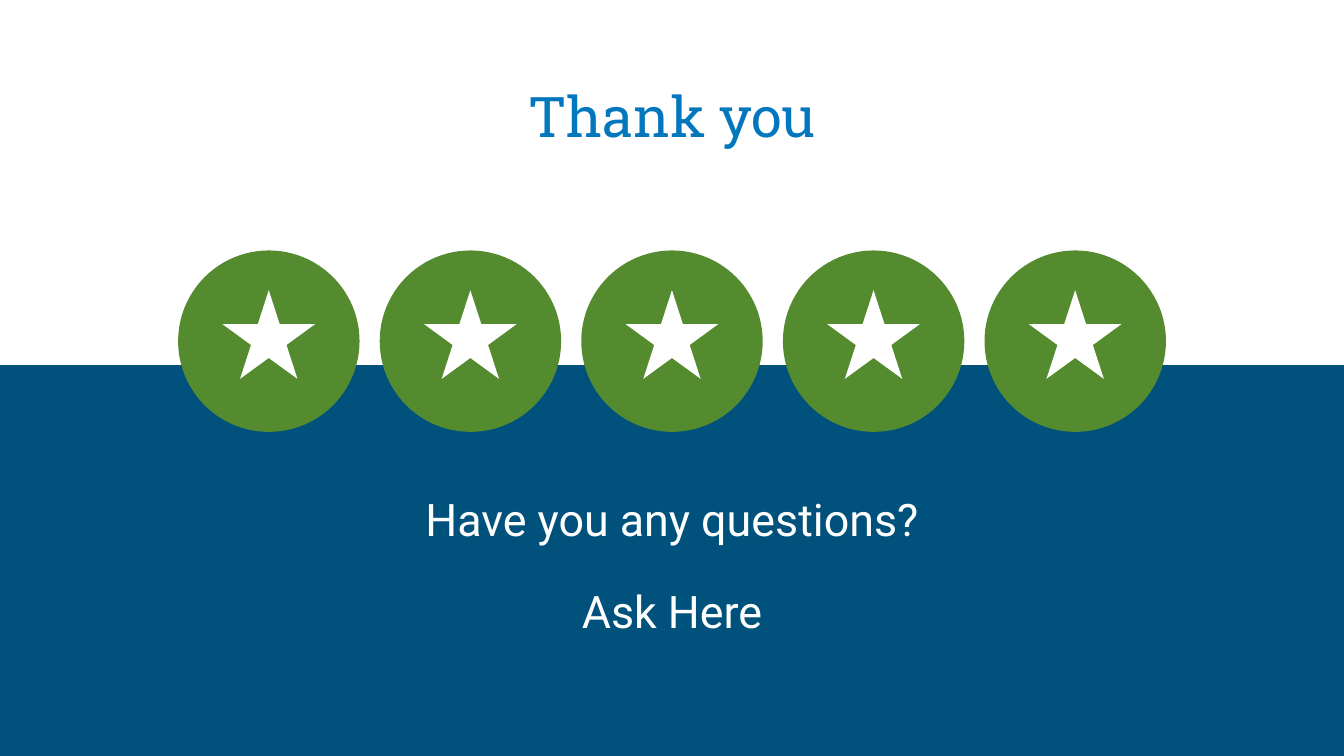
from pptx import Presentation
from pptx.dml.color import RGBColor
from pptx.enum.shapes import MSO_SHAPE
from pptx.enum.text import MSO_ANCHOR, MSO_AUTO_SIZE, PP_ALIGN
from pptx.util import Pt

COLORS = {
    "navy": "00517C",
    "white": "FFFFFF",
    "blue": "0277BD",
    "green": "558B2F",
}
SLIDE_W, SLIDE_H = 720, 405
TEXT_LEFT, TEXT_W = 24.5, 671
BADGE_COUNT = 5
BADGE_PITCH = 108
BADGE_SIZE = 97.2
BADGE_TOP = 134.2
STAR_W, STAR_H = 49.7, 47.5
STAR_TOP = 155.5


def color(name):
    return RGBColor.from_string(COLORS[name])


def add_filled(shapes, kind, left, top, width, height, fill):
    sp = shapes.add_shape(kind, Pt(left), Pt(top), Pt(width), Pt(height))
    sp.shadow.inherit = False
    sp.fill.solid()
    sp.fill.fore_color.rgb = color(fill)
    sp.line.fill.background()
    return sp


def setup_frame(tf, anchor):
    tf.word_wrap = True
    tf.auto_size = MSO_AUTO_SIZE.NONE
    tf.vertical_anchor = anchor
    tf.margin_left = tf.margin_right = Pt(7.2)
    tf.margin_top = tf.margin_bottom = Pt(7.2)


def format_paragraph(p, font, size, fill):
    p.alignment = PP_ALIGN.CENTER
    for r in p.runs:
        r.font.name = font
        r.font.size = Pt(size)
        r.font.color.rgb = color(fill)


def set_title(s, text):
    sp = s.shapes.title
    s.shapes.element.append(sp.element)
    sp.left, sp.top = Pt(TEXT_LEFT), Pt(29.5)
    sp.width, sp.height = Pt(TEXT_W), Pt(57.6)
    tf = sp.text_frame
    tf.text = text
    setup_frame(tf, MSO_ANCHOR.BOTTOM)
    format_paragraph(tf.paragraphs[0], "Roboto Slab", 30, "blue")


def add_badge(s, center):
    shapes = s.shapes.add_group_shape().shapes
    add_filled(shapes, MSO_SHAPE.OVAL, center - BADGE_SIZE / 2, BADGE_TOP,
               BADGE_SIZE, BADGE_SIZE, "green")
    add_filled(shapes, MSO_SHAPE.STAR_5_POINT, center - STAR_W / 2, STAR_TOP,
               STAR_W, STAR_H, "white")


def add_body(s, lines):
    sp = s.shapes.add_textbox(Pt(TEXT_LEFT), Pt(252), Pt(TEXT_W), Pt(126.7))
    tf = sp.text_frame
    tf.text = "\n".join(lines)
    setup_frame(tf, MSO_ANCHOR.TOP)
    for p in tf.paragraphs:
        format_paragraph(p, "Roboto", 24, "white")
        p.line_spacing = 1.15
    for p in tf.paragraphs[1:]:
        p.space_before = p.space_after = Pt(16)


def main():
    prs = Presentation()
    prs.slide_width, prs.slide_height = Pt(SLIDE_W), Pt(SLIDE_H)
    s = prs.slides.add_slide(prs.slide_layouts[5])
    s.background.fill.solid()
    s.background.fill.fore_color.rgb = color("navy")

    add_filled(s.shapes, MSO_SHAPE.RECTANGLE, 0, 0, 721.5, 195.6, "white")
    set_title(s, "Thank you")
    for i in range(BADGE_COUNT):
        add_badge(s, SLIDE_W / 2 + (i - (BADGE_COUNT - 1) / 2) * BADGE_PITCH)
    add_body(s, ["Have you any questions?", "Ask Here"])

    prs.save("out.pptx")


if __name__ == "__main__":
    main()
